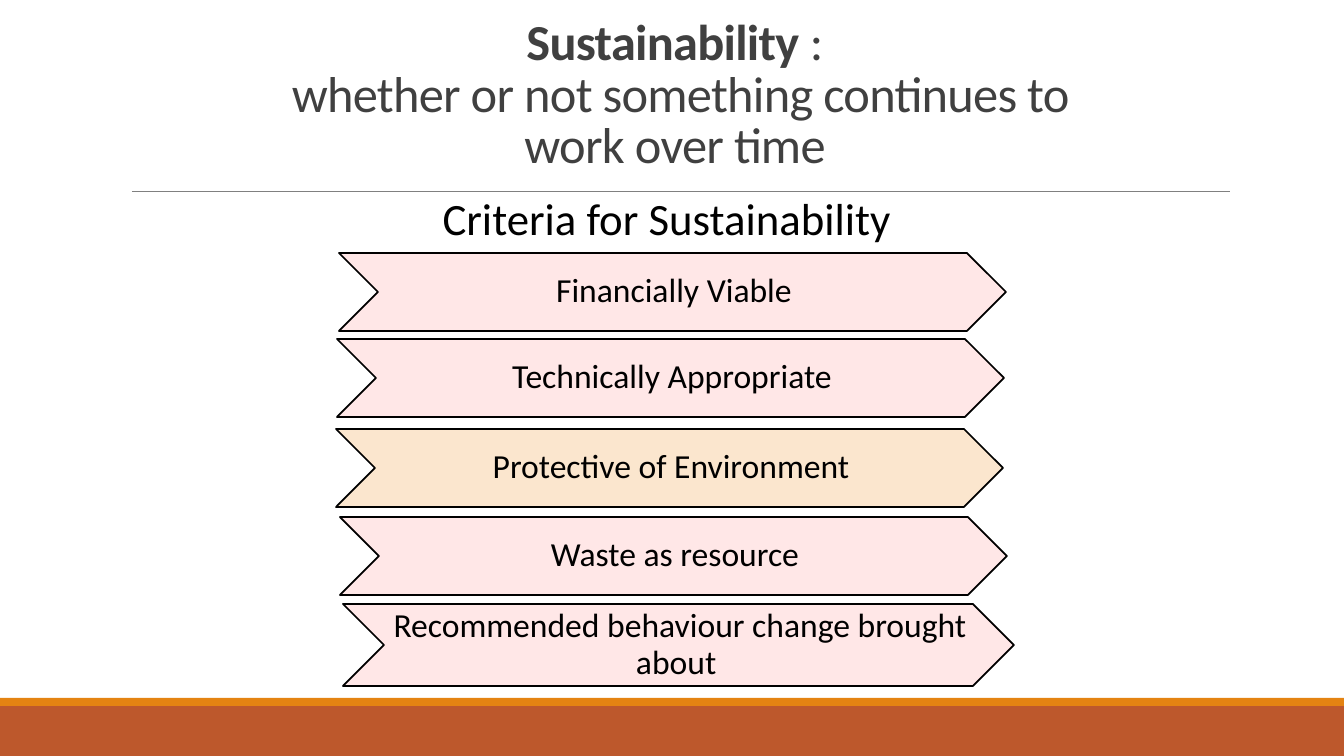
from pptx import Presentation
from pptx.dml.color import RGBColor
from pptx.enum.shapes import MSO_CONNECTOR as CONNECTOR, MSO_SHAPE as SHAPE
from pptx.enum.text import MSO_ANCHOR as ANCHOR, MSO_AUTO_SIZE as AUTO, PP_ALIGN as ALIGN
from pptx.oxml.ns import qn
from pptx.util import Pt
from lxml import etree

# Content
TITLE = [
    [("Sustainability", True), (" :", False)],
    [(" whether or not something continues to work over time", False)],
]
HEADING = "Criteria for Sustainability "
CRITERIA = [  # text, fill, box in px
    ("Financially Viable", "pink", (339, 253, 667, 78)),
    ("Technically Appropriate", "pink", (337, 339, 667, 78)),
    ("Protective of Environment", "cream", (336, 429, 667, 78)),
    ("Waste as resource", "pink", (340, 517, 667, 78)),
    ("Recommended behaviour change brought about ", "pink", (343, 604, 671, 82)),
]
FOOTER_BARS = [("rust", (0, 706, 1344, 50)), ("orange", (0, 698, 1344, 8))]
TITLE_BOX = (214, 104, 882, 75)
HEADING_BOX = (233, 186, 878, 105)
RULE = (132, 191, 1230, 191)
TITLE_SHIFT = 40
COLORS = {
    "rust": "BD582C", "orange": "E48312", "pink": "FFE7E7", "cream": "FBE6CE",
    "black": "000000", "title": "404040", "rule": "808080",
}
FONT = "Calibri"


def px(n):
    return round(n * 914400 / 100.8)


def box(values):
    return [px(v) for v in values]


def color(name):
    return RGBColor.from_string(COLORS[name])


def add_run(p, text, size, ink, bold=False):
    r = p.add_run()
    r.text = text
    for key, value in {"name": FONT, "size": Pt(size), "bold": bold}.items():
        setattr(r.font, key, value)
    r.font.color.rgb = color(ink)
    return r


def format_frame(tf, **values):
    for key, value in values.items():
        setattr(tf, key, value)


def add_filled(slide, kind, area, fill):
    sp = slide.shapes.add_shape(kind, *box(area))
    sp.shadow.inherit = False
    sp.fill.solid()
    sp.fill.fore_color.rgb = color(fill)
    sp.line.fill.background()
    return sp


def add_title(slide):
    sp = slide.shapes.title
    sp.left, sp.top, sp.width, sp.height = box(TITLE_BOX)
    tf = sp.text_frame
    format_frame(tf, word_wrap=True, auto_size=AUTO.NONE, vertical_anchor=ANCHOR.BOTTOM)
    for i, runs in enumerate(TITLE):
        p = tf.add_paragraph() if i else tf.paragraphs[0]
        p.alignment, p.line_spacing = ALIGN.CENTER, 0.85
        for text, bold in runs:
            r = add_run(p, text, 36, "title", bold)
            r.font._element.set("spc", "-50")
    first = tf.paragraphs[0]._p.get_or_add_pPr()
    first.set("marL", str(px(TITLE_SHIFT)))
    first.set("indent", "0")


def add_rule(slide):
    line = slide.shapes.add_connector(CONNECTOR.STRAIGHT, *box(RULE))
    line.line.color.rgb = color("rule")
    line.line.width = Pt(0.5)
    etree.SubElement(line._element.spPr, qn("a:effectLst"))


def add_criterion(slide, text, fill, area):
    sp = add_filled(slide, SHAPE.CHEVRON, area, fill)
    sp.line.color.rgb = color("black")
    sp.line.width = Pt(1.25)
    tf = sp.text_frame
    format_frame(tf, word_wrap=True, vertical_anchor=ANCHOR.MIDDLE, margin_left=px(3),
                 margin_top=px(2), margin_right=0, margin_bottom=px(2))
    p = tf.paragraphs[0]
    p.alignment, p.line_spacing = ALIGN.CENTER, 0.9
    add_run(p, text, 24, "black")


def add_heading(slide):
    tf = slide.shapes.add_textbox(*box(HEADING_BOX)).text_frame
    tf.word_wrap = True
    p = tf.paragraphs[0]
    p.alignment = ALIGN.CENTER
    add_run(p, HEADING, 32, "black")


def main():
    prs = Presentation()
    prs.slide_width, prs.slide_height = px(1344), px(756)
    slide = prs.slides.add_slide(prs.slide_layouts[5])
    for fill, area in FOOTER_BARS:
        add_filled(slide, SHAPE.RECTANGLE, area, fill)
    add_rule(slide)
    add_title(slide)
    for criterion in CRITERIA:
        add_criterion(slide, *criterion)
    add_heading(slide)
    prs.save("out.pptx")


if __name__ == "__main__":
    main()
